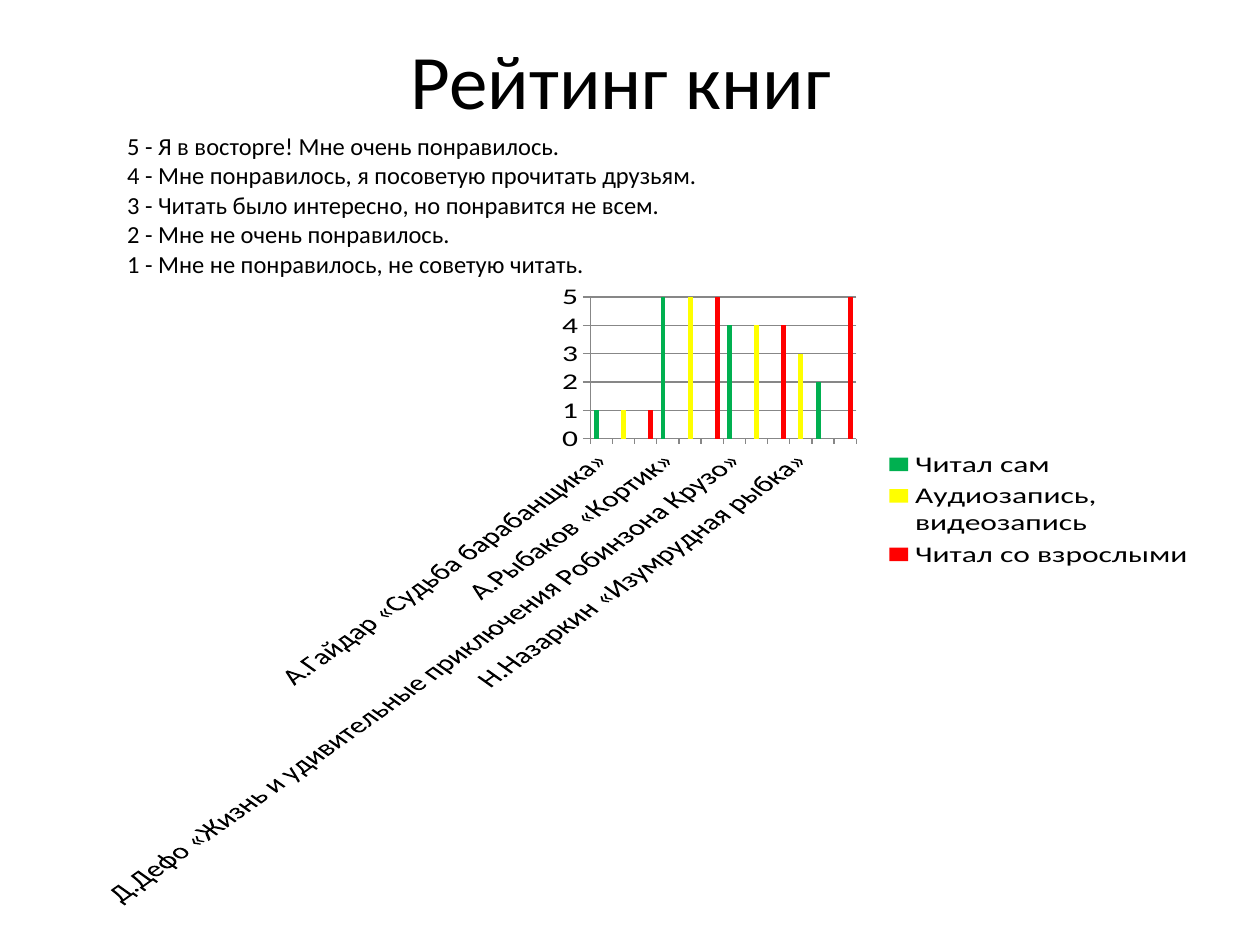
import pptx
import pptx.util
import pptx.chart.data
import pptx.dml.color
import pptx.enum.chart
import pptx.enum.text

Inches, Pt = pptx.util.Inches, pptx.util.Pt
enum = pptx.enum.chart

FONT = "Calibri"
COLORS = {"text": "000000", "grid": "878787",
          "self": "00B050", "media": "FFFF00", "adult": "FF0000"}

TITLE = "Рейтинг книг"
SCALE = [
    "5 - Я в восторге! Мне очень понравилось.",
    "4 - Мне понравилось, я посоветую прочитать друзьям.",
    "3 - Читать было интересно, но понравится не всем.",
    "2 - Мне не очень понравилось.",
    "1 - Мне не понравилось, не советую читать.",
]
SERIES = [("Читал сам", "self"),
          ("Аудиозапись, видеозапись", "media"),
          ("Читал со взрослыми", "adult")]
# label of each group, then series index and rating of its three books
GROUPS = [
    ("А.Гайдар «Судьба барабанщика»", [(0, 1), (1, 1), (2, 1)]),
    ("А.Рыбаков «Кортик»", [(0, 5), (1, 5), (2, 5)]),
    ("Д.Дефо «Жизнь и удивительные приключения Робинзона Крузо»",
     [(0, 4), (1, 4), (2, 4)]),
    ("Н.Назаркин «Изумрудная рыбка»", [(1, 3), (0, 2), (2, 5)]),
]


def color(name):
    return pptx.dml.color.RGBColor.from_string(COLORS[name])


def style(font, size):
    font.name = FONT
    font.size = Pt(size)
    font.color.rgb = color("text")


def fill_text(frame, lines, size, align):
    frame.text = "\n".join(lines)
    frame.word_wrap = True
    for para in frame.paragraphs:
        para.alignment = align
        for run in para.runs:
            style(run.font, size)


def add_title(slide):
    title = slide.shapes.title
    title.left, title.top = Inches(0.43), Inches(0)
    title.width, title.height = Inches(9), Inches(1.25)
    fill_text(title.text_frame, [TITLE], 44, pptx.enum.text.PP_ALIGN.CENTER)
    title.text_frame.vertical_anchor = pptx.enum.text.MSO_ANCHOR.MIDDLE


def chart_data():
    """Label only the first book of each group."""
    data = pptx.chart.data.CategoryChartData()
    data.categories = [label if place == 0 else ""
                       for label, books in GROUPS
                       for place in range(len(books))]
    for index, (name, _) in enumerate(SERIES):
        data.add_series(name, [rate if kind == index else None
                               for _, books in GROUPS
                               for kind, rate in books])
    return data


def add_chart(slide):
    chart = slide.shapes.add_chart(
        enum.XL_CHART_TYPE.COLUMN_CLUSTERED, Inches(0.59), Inches(2.25),
        Inches(9), Inches(4.95), chart_data()).chart
    style(chart.font, 18)
    chart.has_title = False
    chart.has_legend = True
    chart.legend.position = enum.XL_LEGEND_POSITION.RIGHT
    chart.legend.include_in_layout = False

    plot = chart.plots[0]
    plot.gap_width = 150
    plot.vary_by_categories = False
    for series, (_, key) in zip(plot.series, SERIES):
        series.format.fill.solid()
        series.format.fill.fore_color.rgb = color(key)

    for axis in (chart.category_axis, chart.value_axis):
        axis.major_tick_mark = enum.XL_TICK_MARK.OUTSIDE
        axis.format.line.color.rgb = color("grid")
    values = chart.value_axis
    values.minimum_scale, values.maximum_scale = 0, 5
    values.major_unit = 1
    values.has_major_gridlines = True
    values.major_gridlines.format.line.color.rgb = color("grid")


def add_scale(slide):
    box = slide.shapes.add_textbox(Inches(0.91), Inches(0.99),
                                   Inches(6.22), Inches(1.58))
    fill_text(box.text_frame, SCALE, 14, pptx.enum.text.PP_ALIGN.LEFT)
    box.text_frame.auto_size = pptx.enum.text.MSO_AUTO_SIZE.SHAPE_TO_FIT_TEXT


def main():
    deck = pptx.Presentation()
    deck.slide_width, deck.slide_height = Inches(10), Inches(7.5)
    slide = deck.slides.add_slide(deck.slide_layouts[5])
    add_title(slide)
    add_chart(slide)
    add_scale(slide)
    deck.save("out.pptx")


if __name__ == "__main__":
    main()
